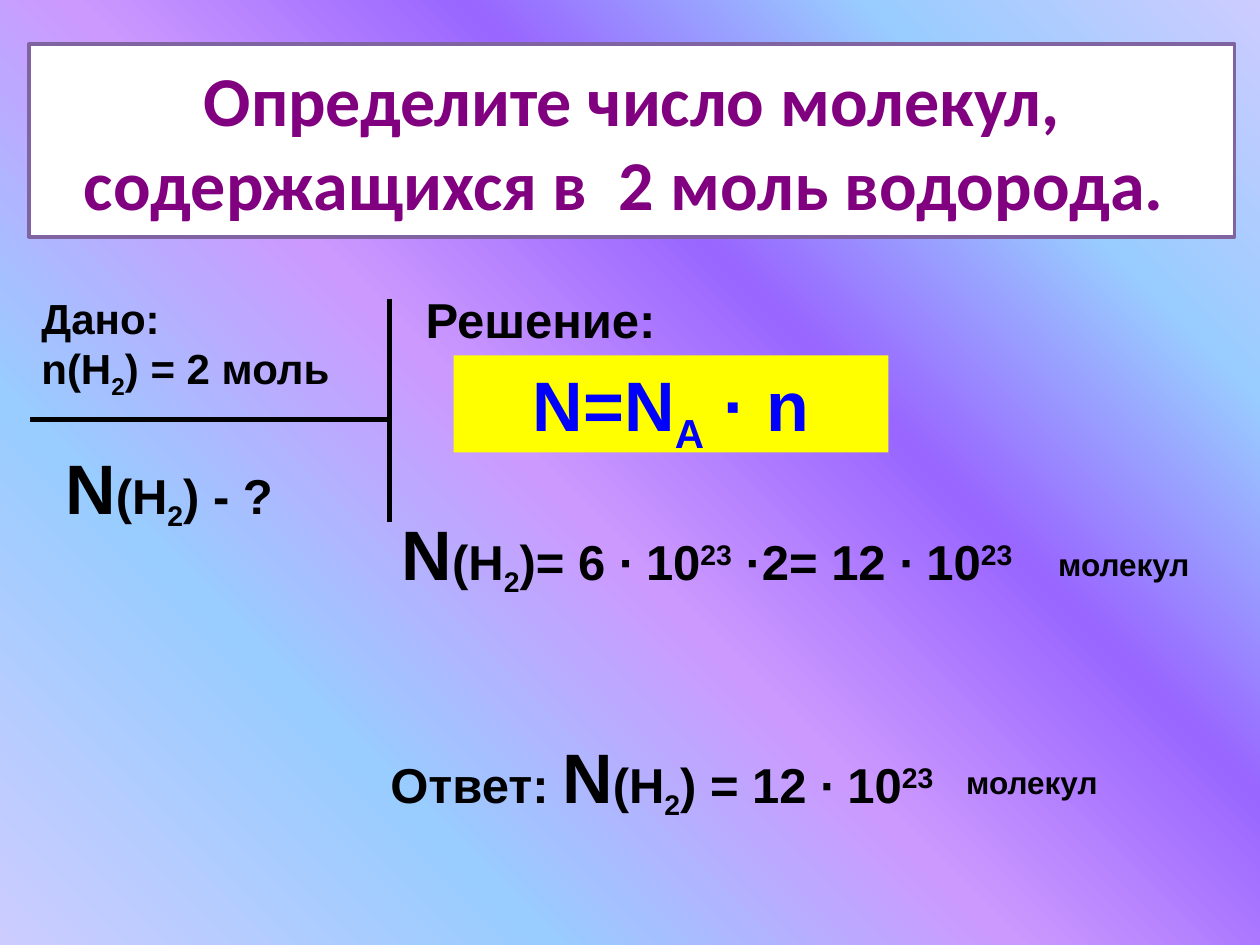
from pptx import Presentation
from pptx.dml.color import RGBColor
from pptx.enum.shapes import MSO_CONNECTOR, MSO_SHAPE
from pptx.enum.text import MSO_ANCHOR, MSO_AUTO_SIZE, PP_ALIGN
from pptx.oxml import parse_xml
from pptx.oxml.ns import qn
from pptx.util import Inches, Pt

RECT = MSO_SHAPE.RECTANGLE
LINE = MSO_CONNECTOR.STRAIGHT
TOP, MIDDLE = MSO_ANCHOR.TOP, MSO_ANCHOR.MIDDLE
GROW, FIXED = MSO_AUTO_SIZE.SHAPE_TO_FIT_TEXT, MSO_AUTO_SIZE.NONE
LEFT, CENTER = PP_ALIGN.LEFT, PP_ALIGN.CENTER

BLACK = RGBColor(0, 0, 0)
WHITE = RGBColor(255, 255, 255)
YELLOW = RGBColor(255, 255, 0)
BLUE = RGBColor(0, 0, 255)
PURPLE = RGBColor(128, 0, 128)
VIOLET = RGBColor(0x80, 0x64, 0xA2)
STOPS = [(0, RGBColor(0xCC, 0xCC, 0xFF)), (18, RGBColor(0x99, 0xCC, 0xFF)),
         (36, RGBColor(0x99, 0x66, 0xFF)), (54, RGBColor(0xCC, 0x99, 0xFF)),
         (75, RGBColor(0x99, 0xCC, 0xFF)), (100, RGBColor(0xCC, 0xCC, 0xFF))]

COLS, ROWS = 100, 75
UNIT = Inches(0.1)
SUB, SUP = -25000, 30000
BIG, MID, SMALL, TINY = 40, 28, 24, 18
NS = "http://schemas.openxmlformats.org"


def grid(*cells):
    """Turn grid units into slide lengths."""
    return [round(cell * UNIT) for cell in cells]


def inner(box, x, y, w, h):
    """Return a part of a box, offset from the corner of the box."""
    return box[0] + x, box[1] + y, w, h


def write(shape, *lines, font="Arial", color=BLACK, align=LEFT,
          anchor=TOP, fit=GROW, wrap=True):
    """Fill a shape with lines made of (text, size, baseline) runs."""
    frame = shape.text_frame
    frame.word_wrap, frame.auto_size = wrap, fit
    frame.vertical_anchor = anchor
    for i, line in enumerate(lines):
        para = frame.add_paragraph() if i else frame.paragraphs[0]
        para.alignment = align
        for text, size, *base in line:
            run = para.add_run()
            run.text = text
            run.font.name, run.font.size = font, Pt(size)
            run.font.bold = True
            run.font.color.rgb = color
            if base:
                run.font._element.set("baseline", str(base[0]))


def label(slide, box, *lines, **style):
    """Place a text box."""
    write(slide.shapes.add_textbox(*grid(*box)), *lines, **style)


def panel(slide, box, fill, edge=None):
    """Place a filled rectangle with an optional edge."""
    shape = slide.shapes.add_shape(RECT, *grid(*box))
    shape.shadow.inherit = False
    shape.fill.solid()
    shape.fill.fore_color.rgb = fill
    if edge:
        shape.line.color.rgb = edge
        shape.line.width = Pt(2)
    else:
        shape.line.fill.background()
    return shape


def rule(slide, *ends):
    """Draw a thick black line between two points."""
    line = slide.shapes.add_connector(LINE, *grid(*ends))
    line.line.color.rgb = BLACK
    line.line.width = Pt(3)
    props = line._element.spPr
    props.append(props.makeelement(qn("a:effectLst"), {}))


def count(tail):
    """Return the runs for the number of hydrogen molecules."""
    return [("N", BIG), ("(Н", MID), ("2", MID, SUB), (tail, MID)]


def paint(slide):
    """Give the slide a round gradient that starts at the top right."""
    stops = "".join(f'<a:gs pos="{pos * 1000}"><a:srgbClr val="{color}"/></a:gs>'
                    for pos, color in STOPS)
    slide._element.cSld.insert(0, parse_xml(
        f'<p:bg xmlns:p="{NS}/presentationml/2006/main" '
        f'xmlns:a="{NS}/drawingml/2006/main"><p:bgPr>'
        f'<a:gradFill rotWithShape="1"><a:gsLst>{stops}</a:gsLst>'
        '<a:path path="circle"><a:fillToRect l="100000" b="100000"/></a:path>'
        '</a:gradFill><a:effectLst/></p:bgPr></p:bg>'))


def title(slide, box):
    """Place the task in a framed panel."""
    text = "Определите число молекул, содержащихся в  2 моль водорода. "
    write(panel(slide, box, WHITE, VIOLET), [(text, BIG)], font="Calibri",
          color=PURPLE, align=CENTER, anchor=MIDDLE, fit=FIXED)


def given(slide, box):
    """Place the known and wanted values with their rules."""
    x, y, w, h = box
    rule(slide, x, y + 9.6, x + w, y + 9.6)
    rule(slide, x + w, y, x + w, y + h)
    label(slide, inner(box, -0.1, -1, 25.2, 9.1), [("Дано:", SMALL)],
          [("n(Н", SMALL), ("2", SMALL, SUB), (") = 2 моль", SMALL)], wrap=False)
    label(slide, inner(box, 1.8, 11.1, 18.9, 7.7), count(") - ?"), wrap=False)


def solve(slide, box):
    """Place the formula and the calculation."""
    label(slide, inner(box, 1.9, 0, 20.5, 5.7), [("Решение:", MID)], wrap=False)
    write(panel(slide, inner(box, 5.1, 5.7, 34.5, 7.7), YELLOW),
          [("N=N", BIG), ("А", BIG, SUB), (" · n", BIG)],
          color=BLUE, align=CENTER)
    label(slide, inner(box, 0, 17.5, 54.3, 7.7), count(")= 6 ∙ 10")
          + [("23", MID, SUP), (" ·2= 12 ∙ 10", MID), ("23", MID, SUP)])
    label(slide, inner(box, 52.1, 20.3, 14.9, 4), [("молекул", TINY)])


def answer(slide, box):
    """Place the answer and its unit."""
    label(slide, inner(box, 0, 0, 46.5, 7.7), [("Ответ: ", MID)]
          + count(") = 12 ∙ 10") + [("23", MID, SUP)])
    label(slide, inner(box, 45.7, 2.4, 14.9, 4), [("молекул", TINY)])


def main():
    """Build and save the slide."""
    deck = Presentation()
    deck.slide_width, deck.slide_height = grid(COLS, ROWS)
    slide = deck.slides.add_slide(deck.slide_layouts[6])
    paint(slide)
    title(slide, (2.3, 3.5, 95.7, 15.3))
    given(slide, (2.4, 23.7, 28.5, 17.7))
    solve(slide, (30.9, 22.5, 67, 25.2))
    answer(slide, (30, 57.7, 60.6, 7.7))
    deck.save("out.pptx")


if __name__ == "__main__":
    main()
